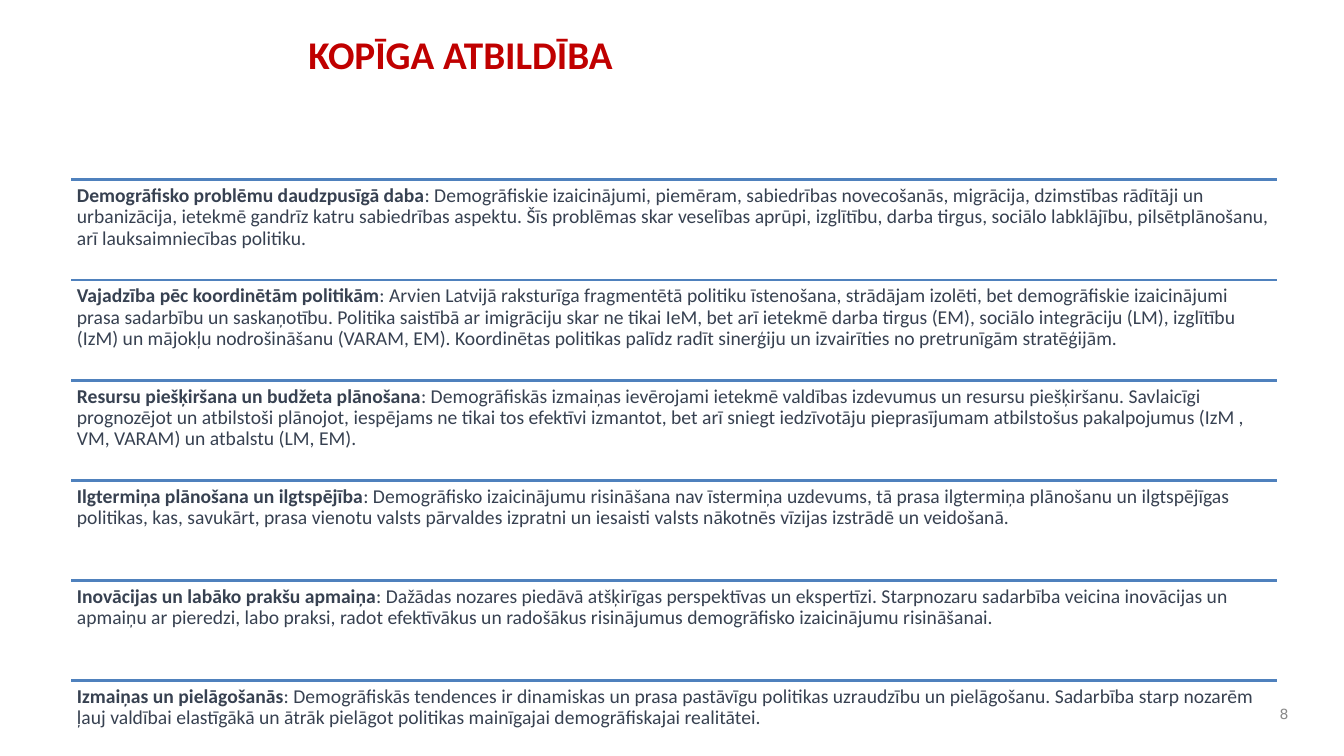
from dataclasses import dataclass

import pptx
import pptx.dml.color
import pptx.enum.shapes
import pptx.enum.text
import pptx.oxml
import pptx.util
from pptx.util import Cm

ALIGN = pptx.enum.text.PP_ALIGN
ANCHOR = pptx.enum.text.MSO_ANCHOR


@dataclass(frozen=True)
class Theme:
    font: str = "Calibri"
    number_font: str = "DejaVu Sans"
    heading: str = "C00000"
    body: str = "374151"
    rule: str = "4F81BD"
    muted: str = "898989"
    heading_size: int = 28
    body_size: int = 14
    number_size: int = 10
    rule_width: int = 2


THEME = Theme()

ARGUMENTS = [
    ("Demogrāfisko problēmu daudzpusīgā daba",
     ": Demogrāfiskie izaicinājumi, piemēram, sabiedrības novecošanās, migrācija, "
     "dzimstības rādītāji un urbanizācija, ietekmē gandrīz katru sabiedrības aspektu. "
     "Šīs problēmas skar veselības aprūpi, izglītību, darba tirgus, sociālo labklājību, "
     "pilsētplānošanu, arī lauksaimniecības politiku."),
    ("Vajadzība pēc koordinētām politikām",
     ": Arvien Latvijā raksturīga fragmentētā politiku īstenošana, strādājam izolēti, "
     "bet demogrāfiskie izaicinājumi prasa sadarbību un saskaņotību. Politika saistībā "
     "ar imigrāciju skar ne tikai IeM, bet arī ietekmē darba tirgus (EM), sociālo "
     "integrāciju (LM), izglītību (IzM) un mājokļu nodrošināšanu (VARAM, EM). "
     "Koordinētas politikas palīdz radīt sinerģiju un izvairīties no pretrunīgām "
     "stratēģijām."),
    ("Resursu piešķiršana un budžeta plānošana",
     ": Demogrāfiskās izmaiņas ievērojami ietekmē valdības izdevumus un resursu "
     "piešķiršanu. Savlaicīgi prognozējot un atbilstoši plānojot, iespējams ne tikai "
     "tos efektīvi izmantot, bet arī sniegt iedzīvotāju pieprasījumam atbilstošus "
     "pakalpojumus (IzM , VM, VARAM) un atbalstu (LM, EM)."),
    ("Ilgtermiņa plānošana un ilgtspējība",
     ": Demogrāfisko izaicinājumu risināšana nav īstermiņa uzdevums, tā prasa "
     "ilgtermiņa plānošanu un ilgtspējīgas politikas, kas, savukārt, prasa vienotu "
     "valsts pārvaldes izpratni un iesaisti valsts nākotnēs vīzijas izstrādē un "
     "veidošanā."),
    ("Inovācijas un labāko prakšu apmaiņa",
     ": Dažādas nozares piedāvā atšķirīgas perspektīvas un ekspertīzi. Starpnozaru "
     "sadarbība veicina inovācijas un apmaiņu ar pieredzi, labo praksi, radot "
     "efektīvākus un radošākus risinājumus demogrāfisko izaicinājumu risināšanai."),
    ("Izmaiņas un pielāgošanās",
     ": Demogrāfiskās tendences ir dinamiskas un prasa pastāvīgu politikas uzraudzību "
     "un pielāgošanu. Sadarbība starp nozarēm ļauj valdībai elastīgākā un ātrāk "
     "pielāgot politikas mainīgajai demogrāfiskajai realitātei."),
]


def write(shape, *runs, size, color, font=THEME.font, align=ALIGN.LEFT,
          anchor=ANCHOR.TOP, insets=(0.25, 0.13), line_spacing=1.0):
    """Fill one paragraph of the shape with (text, bold) runs."""
    frame = shape.text_frame
    frame.word_wrap = True
    frame.auto_size = pptx.enum.text.MSO_AUTO_SIZE.NONE
    frame.vertical_anchor = anchor
    frame.margin_left = frame.margin_right = Cm(insets[0])
    frame.margin_top = frame.margin_bottom = Cm(insets[1])
    paragraph = frame.paragraphs[0]
    paragraph.alignment = align
    paragraph.line_spacing = line_spacing
    for text, bold in runs:
        run = paragraph.add_run()
        run.text = text
        run.font.name = font
        run.font.size = pptx.util.Pt(size)
        run.font.bold = bold
        run.font.color.rgb = pptx.dml.color.RGBColor.from_string(color)


def place_title(slide, left, top, width, height):
    title = slide.shapes.title
    title.left, title.top, title.width, title.height = left, top, width, height
    write(title, ("KOPĪGA ATBILDĪBA", True),
          size=THEME.heading_size, color=THEME.heading)


def add_rule(slide, left, top, width):
    rule = slide.shapes.add_connector(
        pptx.enum.shapes.MSO_CONNECTOR.STRAIGHT, left, top, left + width, top)
    rule.line.color.rgb = pptx.dml.color.RGBColor.from_string(THEME.rule)
    rule.line.width = pptx.util.Pt(THEME.rule_width)
    properties = rule.element.spPr
    properties.append(pptx.oxml.parse_xml(
        '<a:effectLst xmlns:a="http://schemas.openxmlformats.org/drawingml/2006/main"/>'))


def add_arguments(slide, left, top, width, height):
    """Stack the arguments in equal rows, each under its own rule."""
    row_height = height // len(ARGUMENTS)
    for row, (claim, explanation) in enumerate(ARGUMENTS):
        row_top = top + row * row_height
        add_rule(slide, left, row_top, width)
        argument = slide.shapes.add_textbox(left, row_top, width, row_height)
        write(argument, (claim, True), (explanation, False),
              size=THEME.body_size, color=THEME.body,
              insets=(0.15, 0.15), line_spacing=0.9)


def add_page_number(slide, left, top, width, height):
    number = slide.shapes.add_textbox(left, top, width, height)
    write(number, ("8", False), size=THEME.number_size, color=THEME.muted,
          font=THEME.number_font, align=ALIGN.RIGHT, anchor=ANCHOR.MIDDLE)


def main():
    deck = pptx.Presentation()
    deck.slide_width, deck.slide_height = Cm(33.87), Cm(19.05)
    slide = deck.slides.add_slide(deck.slide_layouts.get_by_name("Title Only"))
    place_title(slide, Cm(7.52), Cm(0.64), Cm(25.76), Cm(2.87))
    add_page_number(slide, Cm(31.6), Cm(17.58), Cm(1.12), Cm(0.84))
    add_arguments(slide, Cm(1.79), Cm(4.53), Cm(30.39), Cm(15.15))
    deck.save("out.pptx")


if __name__ == "__main__":
    main()
